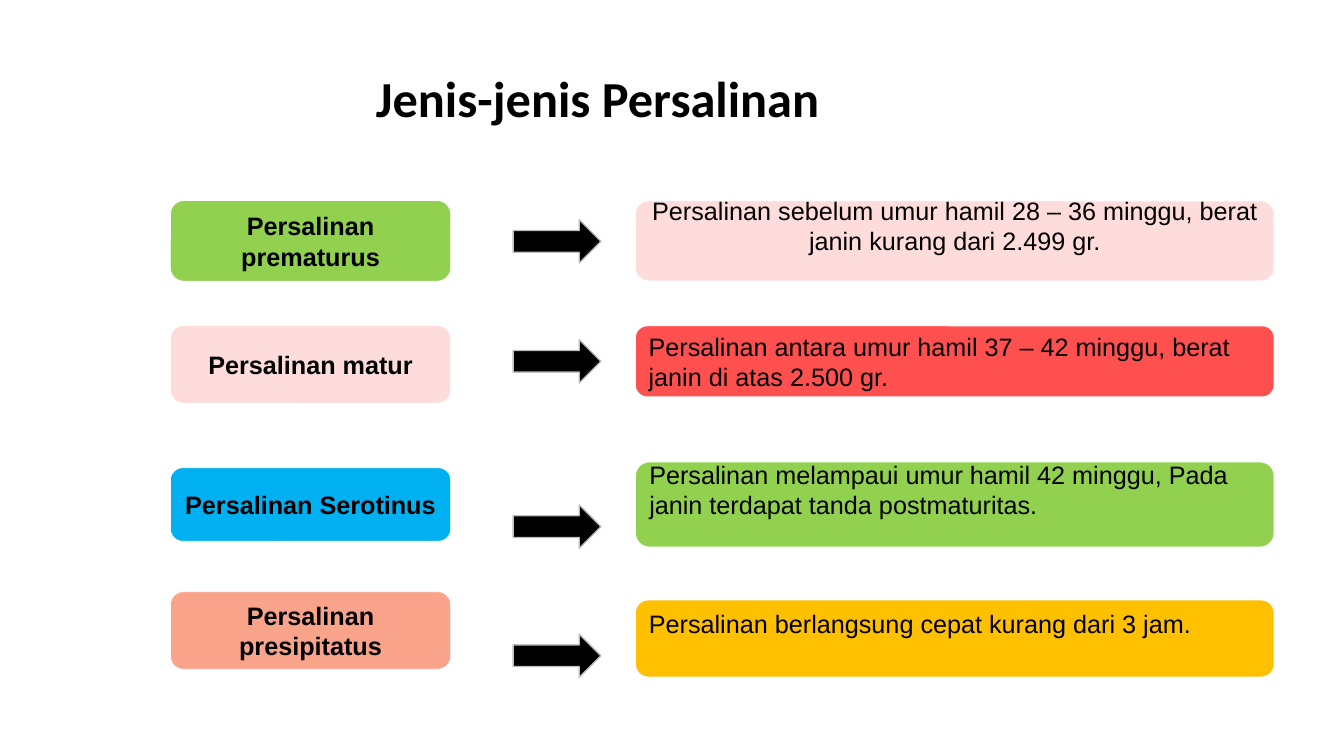
from dataclasses import dataclass

from pptx import Presentation
from pptx.dml.color import RGBColor
from pptx.enum.shapes import MSO_SHAPE
from pptx.enum.text import MSO_ANCHOR, PP_ALIGN
from pptx.util import Inches, Pt

ROUNDED, ARROW = MSO_SHAPE.ROUNDED_RECTANGLE, MSO_SHAPE.RIGHT_ARROW
MIDDLE = MSO_ANCHOR.MIDDLE
LEFT, CENTER = PP_ALIGN.LEFT, PP_ALIGN.CENTER


@dataclass(frozen=True)
class Theme:
    black: str = "000000"
    white: str = "FFFFFF"
    gray: str = "BDBDBD"
    green: str = "92D050"
    pink: str = "FFDCDC"
    blue: str = "00B0F0"
    salmon: str = "FAA38B"
    red: str = "FF5050"
    amber: str = "FFC000"
    title_font: str = "Calibri"
    body_font: str = "Arial"
    title_size: int = 36
    body_size: int = 18


theme = Theme()
presentation = Presentation()
presentation.slide_width = Inches(13.33)
presentation.slide_height = Inches(7.5)
slide = presentation.slides.add_slide(presentation.slide_layouts[6])


def write_text(shape, text, font=theme.body_font, size=theme.body_size,
               bold=False, align=LEFT, bottom=0.05):
    frame = shape.text_frame
    frame.word_wrap = True
    frame.vertical_anchor = MIDDLE
    frame.margin_bottom = Inches(bottom)
    paragraph = frame.paragraphs[0]
    paragraph.text = text
    paragraph.alignment = align
    paragraph.font.name = font
    paragraph.font.size = Pt(size)
    paragraph.font.bold = bold
    paragraph.font.color.rgb = RGBColor.from_string(theme.black)


def add_filled_shape(kind, left, top, width, height, fill, line, line_width):
    shape = slide.shapes.add_shape(
        kind, Inches(left), Inches(top), Inches(width), Inches(height))
    shape.shadow.inherit = False
    shape.fill.solid()
    shape.fill.fore_color.rgb = RGBColor.from_string(fill)
    shape.line.color.rgb = RGBColor.from_string(line)
    shape.line.width = Pt(line_width)
    return shape


title = slide.shapes.add_textbox(Inches(3.63), Inches(0.24), Inches(6.69), Inches(1.45))
write_text(title, "Jenis-jenis Persalinan", font=theme.title_font,
           size=theme.title_size, bold=True)

# Name, top, height and fill of each type of birth
types = [
    ("Persalinan prematurus", 1.99, 0.8, theme.green),
    ("Persalinan matur", 3.23, 0.77, theme.pink),
    ("Persalinan Serotinus", 4.64, 0.73, theme.blue),
    ("Persalinan presipitatus", 5.87, 0.77, theme.salmon),
]
for name, top, height, fill in types:
    box = add_filled_shape(ROUNDED, 1.69, top, 2.78, height, fill, theme.white, 0.5)
    write_text(box, name, bold=True, align=CENTER)

# Text, top, height, fill, alignment and bottom margin of each description
descriptions = [
    ("Persalinan sebelum umur hamil 28 – 36 minggu, berat janin kurang dari 2.499 gr.",
     1.99, 0.8, theme.pink, CENTER, 0.35),
    ("Persalinan antara umur hamil 37 – 42 minggu, berat janin di atas 2.500 gr.",
     3.23, 0.71, theme.red, LEFT, 0.05),
    ("Persalinan melampaui umur hamil 42 minggu, Pada janin terdapat tanda postmaturitas.",
     4.58, 0.85, theme.green, LEFT, 0.35),
    ("Persalinan berlangsung cepat kurang dari 3 jam.",
     5.95, 0.77, theme.amber, LEFT, 0.35),
]
for text, top, height, fill, align, bottom in descriptions:
    box = add_filled_shape(ROUNDED, 6.3, top, 6.34, height, fill, theme.white, 1)
    write_text(box, text, align=align, bottom=bottom)

for top in (2.18, 3.37, 5.01, 6.29):
    add_filled_shape(ARROW, 5.09, top, 0.87, 0.43, theme.black, theme.gray, 1)

presentation.save("out.pptx")
